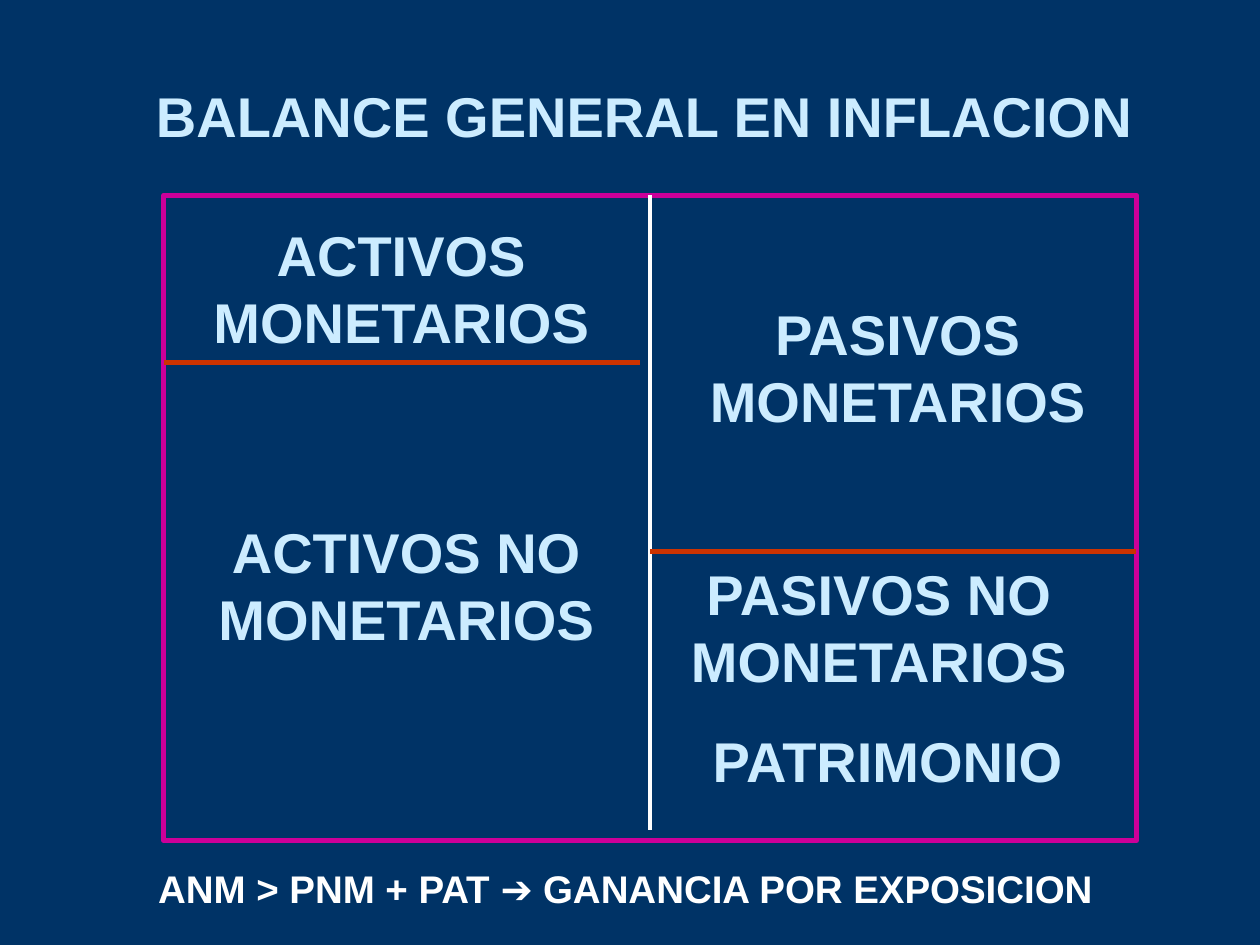
from typing import NamedTuple

from lxml import etree
from pptx import Presentation
from pptx.dml.color import RGBColor
from pptx.enum import shapes, text
from pptx.oxml.ns import qn
from pptx.util import Inches, Pt

NAVY, PALE_BLUE, WHITE = "003366", "CCECFF", "FFFFFF"
MAGENTA, RED = "CC0099", "CC3300"

LEFT, TOP, WIDTH, HEIGHT = 1.3, 1.55, 7.72, 5.12
RIGHT, MIDDLE = LEFT + WIDTH, LEFT + WIDTH / 2


class Label(NamedTuple):
    wording: str
    left: float
    top: float
    width: float
    height: float
    size: int = 32
    color: str = PALE_BLUE


class Divider(NamedTuple):
    x1: float
    y1: float
    x2: float
    y2: float
    color: str
    weight: float


HEADING = Label("BALANCE GENERAL EN INFLACION", 0.9, 0.6, 8.43, 0.63)
LABELS = [
    Label("ACTIVOS MONETARIOS", 1.53, 1.7, 3.31, 1.17),
    Label("ACTIVOS NO MONETARIOS", 1.61, 4.06, 3.23, 1.17),
    Label("PASIVOS MONETARIOS", 5.47, 2.33, 3.31, 1.17),
    Label("PASIVOS NO MONETARIOS", 5.32, 4.39, 3.31, 1.17),
    Label("PATRIMONIO", 5.47, 5.72, 3.15, 0.63),
    Label("ANM > PNM + PAT ➔ GANANCIA POR EXPOSICION",
          0.2, 6.82, 9.53, 0.47, 22, WHITE),
]
DIVIDERS = [
    Divider(MIDDLE, TOP, MIDDLE, 6.59, WHITE, 2.25),
    Divider(LEFT, 2.88, 5.08, 2.88, RED, 3),
    Divider(MIDDLE, 4.38, RIGHT, 4.38, RED, 3),
]


def rgb(color: str) -> RGBColor:
    return RGBColor.from_string(color)


def write_label(shape, label: Label) -> None:
    """Place a text shape and give it the label's centred bold wording."""
    shape.left, shape.top = Inches(label.left), Inches(label.top)
    shape.width, shape.height = Inches(label.width), Inches(label.height)
    frame = shape.text_frame
    frame.text = label.wording
    frame.word_wrap = True
    frame.auto_size = text.MSO_AUTO_SIZE.NONE
    frame.vertical_anchor = text.MSO_ANCHOR.TOP
    paragraph = frame.paragraphs[0]
    paragraph.alignment = text.PP_ALIGN.CENTER
    font = paragraph.runs[0].font
    font.name, font.size, font.bold = "Arial", Pt(label.size), True
    font.color.rgb = rgb(label.color)


def draw_frame(slide) -> None:
    frame = slide.shapes.add_shape(
        shapes.MSO_SHAPE.RECTANGLE,
        Inches(LEFT), Inches(TOP), Inches(WIDTH), Inches(HEIGHT))
    frame.shadow.inherit = False
    frame.fill.background()
    frame.line.color.rgb = rgb(MAGENTA)
    frame.line.width = Pt(3)


def draw_divider(slide, divider: Divider) -> None:
    line = slide.shapes.add_connector(
        shapes.MSO_CONNECTOR.STRAIGHT,
        Inches(divider.x1), Inches(divider.y1),
        Inches(divider.x2), Inches(divider.y2))
    line.line.color.rgb = rgb(divider.color)
    line.line.width = Pt(divider.weight)
    etree.SubElement(line._element.spPr, qn("a:effectLst"))


def main() -> None:
    deck = Presentation()
    deck.slide_width, deck.slide_height = Inches(10), Inches(7.5)
    slide = deck.slides.add_slide(deck.slide_layouts[5])
    slide.background.fill.solid()
    slide.background.fill.fore_color.rgb = rgb(NAVY)

    write_label(slide.shapes.title, HEADING)
    draw_frame(slide)
    for divider in DIVIDERS:
        draw_divider(slide, divider)
    for label in LABELS:
        write_label(slide.shapes.add_textbox(0, 0, 0, 0), label)
    deck.save("out.pptx")


if __name__ == "__main__":
    main()
